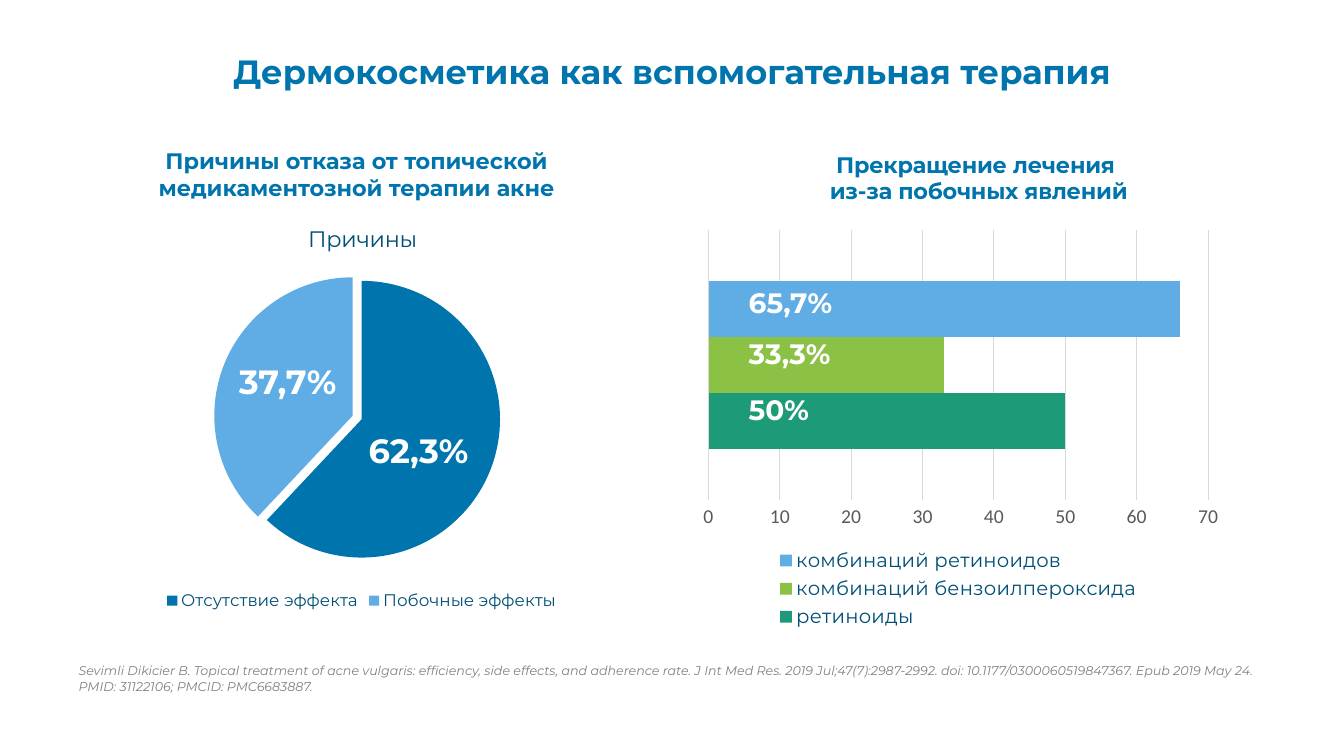
import pptx
import pptx.util
import pptx.chart.data
import pptx.dml.color
import pptx.enum.chart
import pptx.enum.text
import pptx.oxml
import pptx.oxml.ns
from pptx.util import Cm

COLORS = {
    "blue": "0074AD", "sky": "5FADE4", "navy": "004F74", "green": "1D9A78",
    "lime": "8BC145", "white": "FFFFFF", "gray": "808080", "axis": "595959",
    "grid": "D9D9D9",
}
FONT = "Montserrat"
CENTER = pptx.enum.text.PP_ALIGN.CENTER
TITLE = "Дермокосметика как вспомогательная терапия"
REASONS_HEADING = "Причины отказа от топической медикаментозной терапии акне"
REASONS_TITLE = "Причины"
REASONS = [("Отсутствие эффекта", 62, "blue"), ("Побочные эффекты", 38, "sky")]
DROPOUT_TITLE = "Прекращение лечения \nиз-за побочных явлений"
DROPOUT = [("ретиноиды", 50, "green"), ("комбинаций бензоилпероксида", 33, "lime"),
           ("комбинаций ретиноидов", 66, "sky")]
# text, left, top, width, height (cm), size
LABELS = [
    ("62,3%", 9.04, 10.72, 3.28, 1.27, 24),
    ("37,7%", 5.77, 8.97, 3.3, 1.27, 24),
    ("65,7%", 18.62, 7.06, 2.74, 1.12, 20),
    ("33,3%", 18.62, 8.36, 2.74, 1.12, 20),
    ("50%", 18.62, 9.77, 2.74, 1.12, 20),
]
CITATION = (
    "Sevimli Dikicier B. Topical treatment of acne vulgaris: efficiency, side effects, "
    "and adherence rate. J Int Med Res. 2019 Jul;47(7):2987-2992. "
    "doi: 10.1177/0300060519847367. Epub 2019 May 24. PMID: 31122106; PMCID: PMC6683887."
)
REASONS_BOX = (1.85, 5.23, 14.53, 10.26)
DROPOUT_BOX = (17.45, 3.58, 13.54, 12.37)


def rgb(name):
    return pptx.dml.color.RGBColor.from_string(COLORS[name])


def style(font, size, color, bold=False, italic=False, name=FONT):
    font.name, font.size = name, pptx.util.Pt(size)
    font.bold, font.italic = bold, italic
    font.color.rgb = rgb(color)


def write(tf, text, align=None, spacing=None, **fmt):
    for i, line in enumerate(text.split("\n")):
        p = tf.paragraphs[0] if i == 0 else tf.add_paragraph()
        p.alignment = align
        if spacing:
            p.line_spacing = pptx.util.Pt(spacing)
        r = p.add_run()
        r.text = line
        style(r.font, **fmt)


def add_text(s, text, box, **fmt):
    tf = s.shapes.add_textbox(*map(Cm, box)).text_frame
    tf.word_wrap = True
    write(tf, text, **fmt)


def set_layout(element, index, x, y, w=None, h=None, inner=False):
    """Place a chart part by fractions of the chart area."""
    for old in element.findall(pptx.oxml.ns.qn("c:layout")):
        element.remove(old)
    tags = [("layoutTarget", "inner")] if inner else []
    tags += [("xMode", "edge"), ("yMode", "edge"), ("x", x), ("y", y)]
    if w:
        tags += [("w", w), ("h", h)]
    body = "".join(f'<c:{tag} val="{val}"/>' for tag, val in tags)
    element.insert(index, pptx.oxml.parse_xml(
        f'<c:layout {pptx.oxml.ns.nsdecls("c")}><c:manualLayout>{body}'
        "</c:manualLayout></c:layout>"))


def add_chart(s, kind, box, categories, series, title, title_at, plot_at,
              legend_size, **title_fmt):
    data = pptx.chart.data.CategoryChartData()
    data.categories = categories
    for name, values in series:
        data.add_series(name, values)
    kind = getattr(pptx.enum.chart.XL_CHART_TYPE, kind)
    chart = s.shapes.add_chart(kind, *map(Cm, box), data).chart
    chart.has_title = chart.has_legend = True
    write(chart.chart_title.text_frame, title, align=CENTER, **title_fmt)
    set_layout(chart.chart_title._element, 1, *title_at)
    chart.legend.position = pptx.enum.chart.XL_LEGEND_POSITION.BOTTOM
    chart.legend.include_in_layout = False
    style(chart.legend.font, legend_size, "navy")
    plot_area = chart._chartSpace.chart.plotArea
    set_layout(plot_area, 0, *plot_at, inner=True)
    return chart


def fill(fmt, color):
    fmt.fill.solid()
    fmt.fill.fore_color.rgb = rgb(color)


def add_reasons_pie(s):
    names, values, colors = zip(*REASONS)
    chart = add_chart(s, "PIE", REASONS_BOX, names, [(REASONS_TITLE, values)],
                      REASONS_TITLE, (0.4, 0.03), (0.26, 0.18, 0.48, 0.68), 12,
                      size=16, color="navy")
    ser = chart.plots[0].series[0]
    for i, color in enumerate(colors):
        fill(ser.points[i].format, color)
    side_effects = ser._element.findall(pptx.oxml.ns.qn("c:dPt"))[1]
    side_effects.find(pptx.oxml.ns.qn("c:spPr")).addprevious(pptx.oxml.parse_xml(
        f'<c:explosion {pptx.oxml.ns.nsdecls("c")} val="7"/>'))


def add_dropout_bars(s):
    chart = add_chart(s, "BAR_CLUSTERED", DROPOUT_BOX, ["1"],
                      [(name, [value]) for name, value, _ in DROPOUT],
                      DROPOUT_TITLE, (0.25, 0.01), (0.03, 0.18, 0.93, 0.55), 14,
                      size=16, color="blue", bold=True)
    set_layout(chart.legend._element, 1, 0.15, 0.82, 0.69, 0.18)
    plot = chart.plots[0]
    plot.gap_width, plot.vary_by_categories = 182, False
    for ser, (_, _, color) in zip(plot.series, DROPOUT):
        fill(ser.format, color)
    chart.category_axis.visible = False
    axis = chart.value_axis
    axis.minimum_scale, axis.maximum_scale, axis.major_unit = 0, 70, 10
    axis.major_tick_mark = pptx.enum.chart.XL_TICK_MARK.NONE
    axis.format.line.fill.background()
    axis.tick_labels.number_format = "General"
    axis.tick_labels.number_format_is_linked = False
    style(axis.tick_labels.font, 14, "axis", name="Calibri")
    grid = axis.major_gridlines.format.line
    grid.color.rgb, grid.width = rgb("grid"), pptx.util.Pt(0.75)


def main():
    prs = pptx.Presentation()
    prs.slide_width, prs.slide_height = Cm(33.87), Cm(19.05)
    s = prs.slides.add_slide(prs.slide_layouts[5])
    title = s.shapes.title
    title.left, title.top, title.width, title.height = map(Cm, (0, 1.37, 33.87, 1.07))
    write(title.text_frame, TITLE, align=CENTER, spacing=22.5,
          size=24, color="blue", bold=True)
    add_text(s, REASONS_HEADING, (3.3, 3.58, 11.38, 1.63), align=CENTER,
             size=16, color="blue", bold=True)
    add_reasons_pie(s)
    add_dropout_bars(s)
    for text, *box, size in LABELS:
        add_text(s, text, box, size=size, color="white", bold=True)
    add_text(s, CITATION, (1.73, 16.59, 30.84, 1.02),
             size=9, color="gray", italic=True)
    prs.save("out.pptx")


if __name__ == "__main__":
    main()
